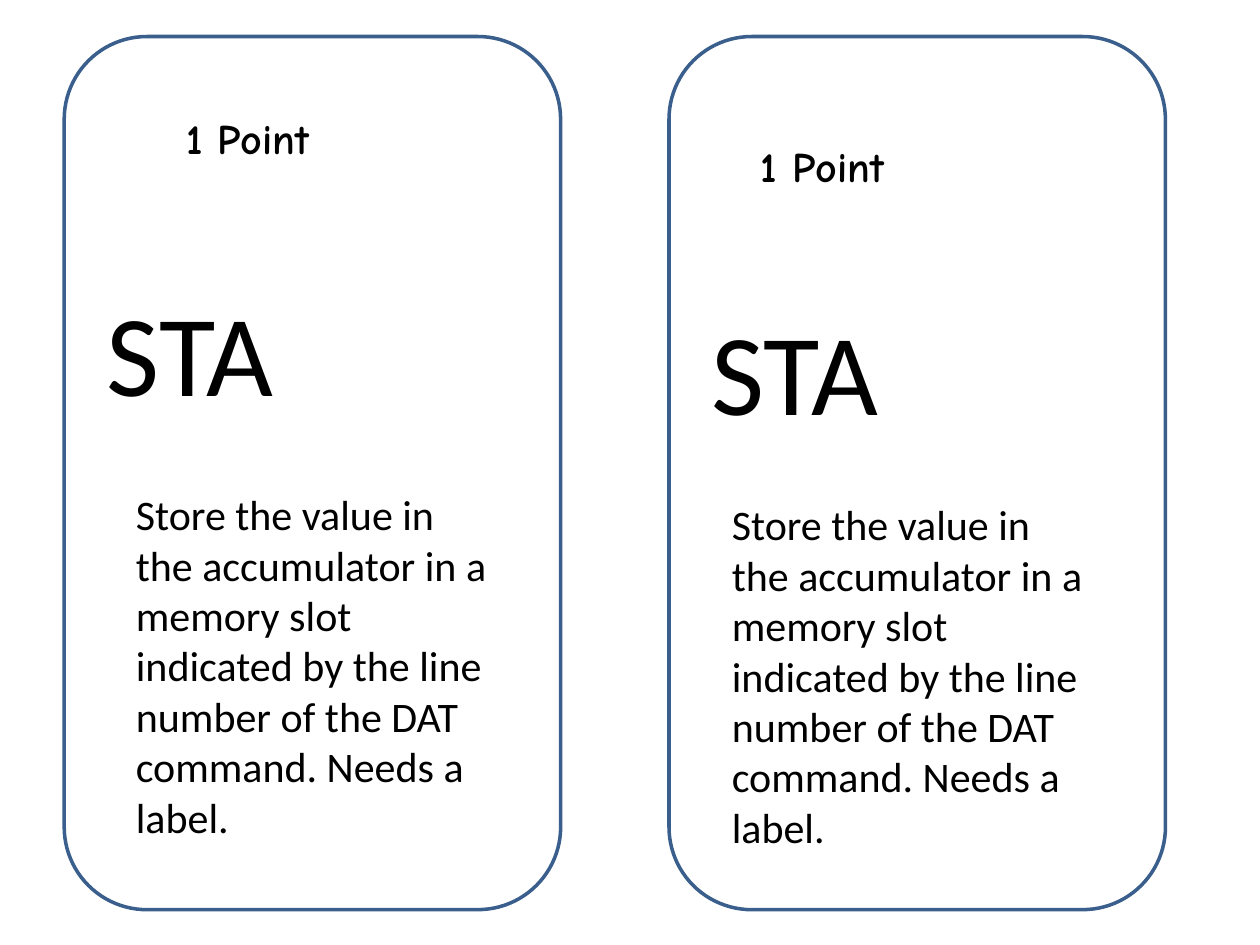
from pptx import Presentation
from pptx.dml.color import RGBColor
from pptx.enum.shapes import MSO_SHAPE
from pptx.enum.text import MSO_AUTO_SIZE
from pptx.util import Inches, Pt

ROUNDED = MSO_SHAPE.ROUNDED_RECTANGLE
FIT_SHAPE = MSO_AUTO_SIZE.SHAPE_TO_FIT_TEXT
BLANK_LAYOUT = 6

POINTS = "1 Point"
COMMAND = "STA"
DESCRIPTION = ("Store the value in the accumulator in a memory slot indicated "
               "by the line number of the DAT command. Needs a label.")

CARD_TOP, CARD_WIDTH, CARD_HEIGHT = 0.29, 3.94, 6.93

# Card left edge, then offsets of each text from the card's top-left corner
CARDS = [
    (0.51, {"command": (0.24, 1.89), "description": (0.47, 3.54), "points": (0.87, 0.55)}),
    (5.31, {"command": (0.24, 2.04), "description": (0.40, 3.62), "points": (0.63, 0.78)}),
]


def color(hex_string):
    return RGBColor.from_string(hex_string)


def add_text(slide, text, left, top, width, height, size, font="Calibri", bold=False):
    box = slide.shapes.add_textbox(Inches(left), Inches(top), Inches(width), Inches(height))
    frame = box.text_frame
    frame.word_wrap = True
    frame.auto_size = FIT_SHAPE
    frame.text = text
    span = frame.paragraphs[0].runs[0]
    span.font.size = Pt(size)
    span.font.name = font
    span.font.bold = bold
    span.font.color.rgb = color("000000")


def add_card(slide, left, top, width, height, offsets):
    # Outline
    outline = slide.shapes.add_shape(
        ROUNDED, Inches(left), Inches(top), Inches(width), Inches(height))
    outline.shadow.inherit = False
    outline.fill.background()
    outline.line.color.rgb = color("3A5F8C")
    outline.line.width = Pt(2)

    def place(part):
        across, down = offsets[part]
        return left + across, top + down

    # Command, explanation and score
    add_text(slide, COMMAND, *place("command"), 3.54, 1.21, 66)
    add_text(slide, DESCRIPTION, *place("description"), 2.99, 2.93, 24)
    add_text(slide, POINTS, *place("points"), 2.36, 0.5, 24, "Comic Neue", True)


def main():
    deck = Presentation()
    deck.slide_width, deck.slide_height = Inches(10), Inches(7.5)
    slide = deck.slides.add_slide(deck.slide_layouts[BLANK_LAYOUT])
    for left, offsets in CARDS:
        add_card(slide, left, CARD_TOP, CARD_WIDTH, CARD_HEIGHT, offsets)
    deck.save("out.pptx")


if __name__ == "__main__":
    main()
